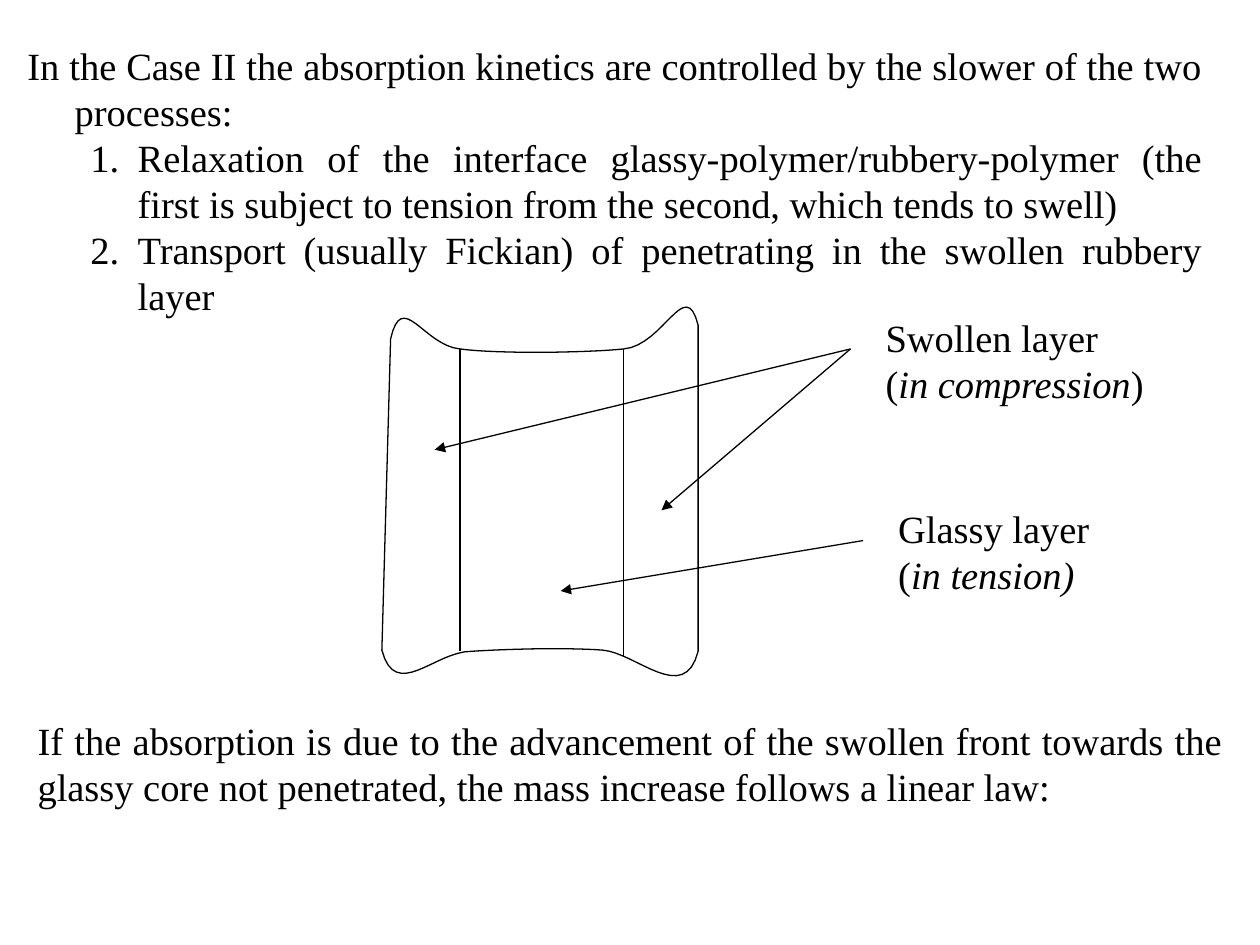
from dataclasses import dataclass

from lxml.etree import SubElement
from pptx import Presentation
from pptx.dml.color import RGBColor
from pptx.enum.shapes import MSO_CONNECTOR
from pptx.enum.text import MSO_AUTO_SIZE, PP_ALIGN
from pptx.oxml.ns import qn
from pptx.util import Pt


@dataclass(frozen=True)
class Theme:
    """Colours, type and line weights of the slide."""
    ink: RGBColor = RGBColor(0, 0, 0)
    font: str = "Times New Roman"
    body: float = 22
    stroke: float = 0.75


THEME = Theme()
SLAB_START = (218.2, 371.5)
SLAB_BOTTOM = [
    [(226, 401), (248.4, 372.2), (269.3, 372.2)],
    [(290.2, 370.8), (324, 370), (344.2, 371.5)],
    [(363.6, 373), (391, 403.2), (398.9, 372.2)],
]
SLAB_TOP_START = (398.9, 185.8)
SLAB_TOP = [
    [(391.7, 157), (379.4, 197.3), (356.4, 199.4)],
    [(334.8, 201.6), (284.4, 202.3), (262.8, 199.4)],
    [(241.9, 197.3), (229.7, 164.9), (223.2, 193.7)],
]
INTERFACES = [
    ((262.8, 199.4), (262.8, 372.2)),
    ((356.4, 199.4), (356.4, 375.5)),
]
POINTERS = [
    ((486, 199.4), (248.4, 257)),
    ((486, 199.4), (378, 291.6)),
    ((493.2, 308.9), (320.4, 337.7)),
]
LABELS = [
    ((499, 175.7, 163.4, 60.5),
     [[("Swollen layer", False)],
      [("(", False), ("in compression", True), (")", False)]]),
    ((506.2, 285.1, 125.3, 60.5),
     [[("Glassy layer", False)], [("(", False), ("in tension)", True)]]),
]
INTRO = ("In the Case II the absorption kinetics are controlled by the slower "
         "of the two processes:")
PROCESSES = [
    "Relaxation of the interface glassy-polymer/rubbery-polymer (the first is "
    "subject to tension from the second, which tends to swell)",
    "Transport (usually Fickian) of penetrating in the swollen rubbery layer",
]
CONCLUSION = ("If the absorption is due to the advancement of the swollen front "
              "towards the glassy core not penetrated, the mass increase follows "
              "a linear law:")


def add_text(shapes, box, paragraphs, wrap=True):
    """Add a text box of (text, italic) runs and return its paragraphs."""
    frame = shapes.add_textbox(*map(Pt, box)).text_frame
    frame.word_wrap = wrap
    frame.auto_size = MSO_AUTO_SIZE.SHAPE_TO_FIT_TEXT
    for index, runs in enumerate(paragraphs):
        paragraph = frame.add_paragraph() if index else frame.paragraphs[0]
        paragraph.alignment = PP_ALIGN.JUSTIFY if wrap else PP_ALIGN.LEFT
        for text, italic in runs:
            run = paragraph.add_run()
            run.text = text
            run.font.name = THEME.font
            run.font.size = Pt(THEME.body)
            run.font.italic = italic
            run.font.color.rgb = THEME.ink
    return frame.paragraphs


def set_hanging(paragraph, margin, hang, numbered=False):
    """Give a paragraph a hanging indent and, if asked, a number."""
    properties = paragraph._p.get_or_add_pPr()
    properties.set("marL", str(Pt(margin)))
    properties.set("indent", str(-Pt(hang)))
    if numbered:
        paragraph.level = 1
        SubElement(properties, qn("a:buFont"), typeface="+mj-lt")
        SubElement(properties, qn("a:buAutoNum"), type="arabicPeriod")


def set_stroke(line):
    """Apply the drawing line of the theme."""
    line.color.rgb = THEME.ink
    line.width = Pt(THEME.stroke)


def add_line(shapes, start, end, arrow=False):
    """Add a straight line, with an arrowhead at its end if asked."""
    connector = shapes.add_connector(
        MSO_CONNECTOR.STRAIGHT, *map(Pt, start + end))
    set_stroke(connector.line)
    if arrow:
        SubElement(connector.line._get_or_add_ln(), qn("a:tailEnd"),
                   type="triangle")
    SubElement(connector._element.spPr, qn("a:effectLst"))


def trace_curves(start, curves, steps=16):
    """Return points along a chain of cubic Bézier curves."""
    points = [start]
    for first, second, end in curves:
        for step in range(1, steps + 1):
            t = step / steps
            weights = ((1 - t) ** 3, 3 * t * (1 - t) ** 2,
                       3 * t ** 2 * (1 - t), t ** 3)
            corners = (start, first, second, end)
            points.append(tuple(
                sum(weight * corner[axis]
                    for weight, corner in zip(weights, corners))
                for axis in (0, 1)))
        start = end
    return points


def add_slab(shapes):
    """Add the outline of the swollen polymer slab."""
    outline = (trace_curves(SLAB_START, SLAB_BOTTOM)
               + trace_curves(SLAB_TOP_START, SLAB_TOP))
    start, *others = [(Pt(x), Pt(y)) for x, y in outline]
    builder = shapes.build_freeform(*start)
    builder.add_line_segments(others, close=True)
    slab = builder.convert_to_shape()
    slab.fill.background()
    slab.shadow.inherit = False
    set_stroke(slab.line)


def main():
    """Build the slide and save it."""
    presentation = Presentation()
    presentation.slide_width, presentation.slide_height = Pt(720), Pt(540)
    slide = presentation.slides.add_slide(presentation.slide_layouts[6])

    intro, *processes = add_text(
        slide.shapes, (8.6, 20.2, 685.4, 167),
        [[(text, False)] for text in (INTRO, *PROCESSES)])
    set_hanging(intro, 27, 27)
    for process in processes:
        set_hanging(process, 63, 27, numbered=True)

    diagram = slide.shapes.add_group_shape().shapes
    add_slab(diagram)
    for start, end in INTERFACES:
        add_line(diagram, start, end)
    for start, end in POINTERS:
        add_line(diagram, start, end, arrow=True)
    for box, paragraphs in LABELS:
        add_text(diagram, box, paragraphs, wrap=False)

    add_text(slide.shapes, (14.4, 406.1, 691.2, 60.5), [[(CONCLUSION, False)]])
    presentation.save("out.pptx")


if __name__ == "__main__":
    main()
